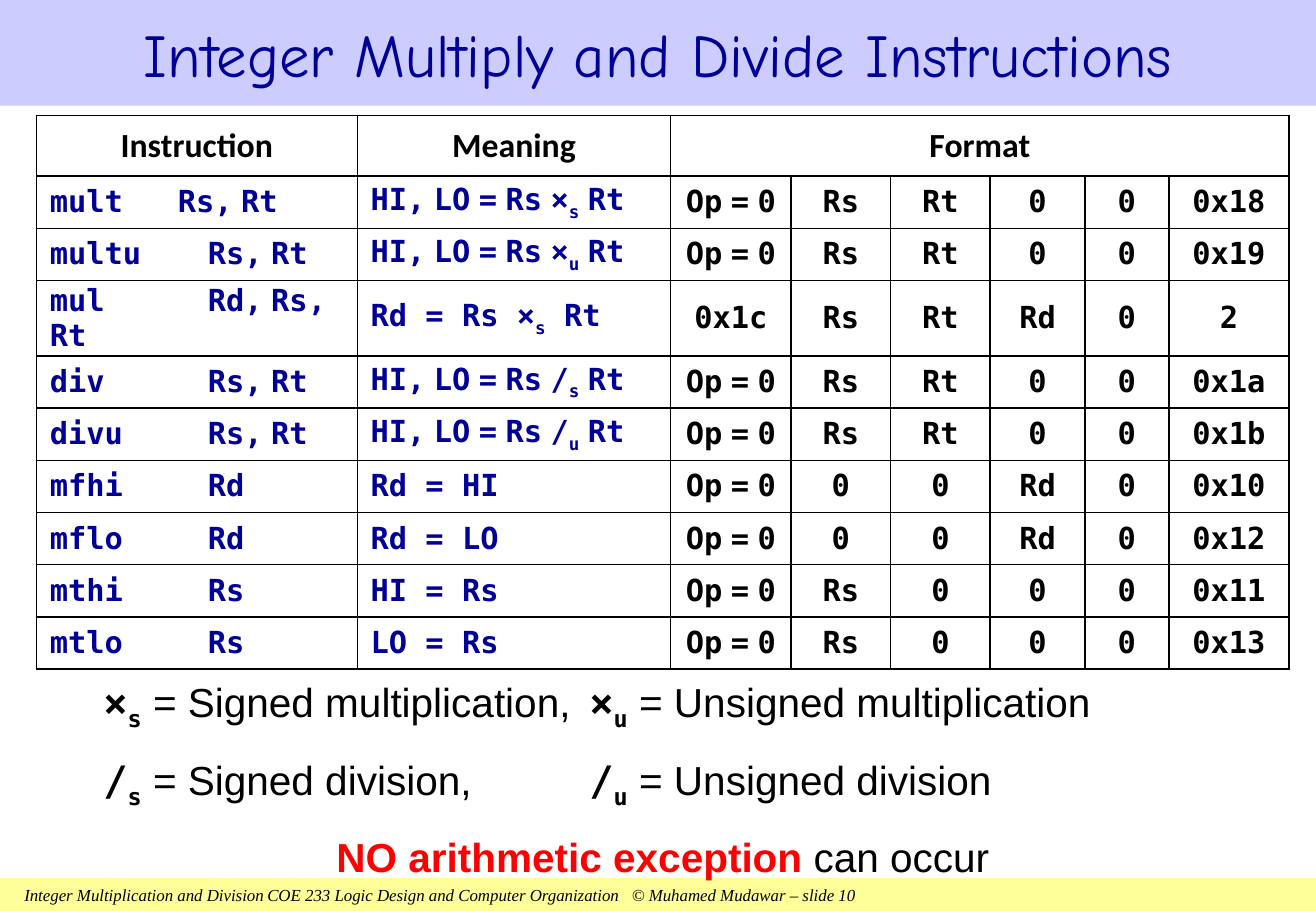
from lxml import etree
from pptx import Presentation
from pptx.dml.color import RGBColor
from pptx.enum import shapes, text
from pptx.oxml.ns import qn
from pptx.util import Inches, Pt

NAVY = RGBColor(0x00, 0x00, 0x99)
BLACK = RGBColor(0x00, 0x00, 0x00)
RED = RGBColor(0xFF, 0x00, 0x00)
LAVENDER = RGBColor(0xCC, 0xCC, 0xFF)
YELLOW = RGBColor(0xFF, 0xFF, 0x99)

MONO = "DejaVu Sans Mono"
BODY = "Arial"
PAGE_WIDTH, PAGE_HEIGHT = 10.83, 7.5
COLUMN_WIDTHS = (2.64, 2.58, 0.99, 0.82, 0.82, 0.78, 0.69, 0.99)
HEADER_HEIGHT, ROW_HEIGHT = 0.5, 0.43
HEADINGS = ("Instruction", "Meaning", "Format")

# "~" marks a narrow space and "_" lowers the next letter.
INSTRUCTIONS = (
    ("mult   Rs,~Rt", "HI,~LO~=~Rs~×_s~Rt", "Op~=~0 Rs Rt 0 0 0x18"),
    ("multu\t  Rs,~Rt", "HI,~LO~=~Rs~×_u~Rt", "Op~=~0 Rs Rt 0 0 0x19"),
    ("mul\t  Rd,~Rs, Rt", "Rd = Rs ×_s Rt", "0x1c Rs Rt Rd 0 2"),
    ("div\t  Rs,~Rt", "HI,~LO~=~Rs~/_s~Rt", "Op~=~0 Rs Rt 0 0 0x1a"),
    ("divu\t  Rs,~Rt", "HI,~LO~=~Rs~/_u~Rt", "Op~=~0 Rs Rt 0 0 0x1b"),
    ("mfhi\t  Rd", "Rd = HI", "Op~=~0 0 0 Rd 0 0x10"),
    ("mflo\t  Rd", "Rd = LO", "Op~=~0 0 0 Rd 0 0x12"),
    ("mthi\t  Rs", "HI = Rs", "Op~=~0 Rs 0 0 0 0x11"),
    ("mtlo\t  Rs", "LO = Rs", "Op~=~0 Rs 0 0 0 0x13"),
)
LEGEND = (
    ("×", "Signed multiplication", "Unsigned multiplication"),
    ("/", "Signed division", "Unsigned division"),
)


def add_span(para, words, font=BODY, size=18, color=BLACK, bold=False, italic=False, lowered=False):
    span = para.add_run()
    span.text = words
    span.font.name = font
    span.font.size = Pt(size)
    span.font.color.rgb = color
    span.font.bold = bold
    span.font.italic = italic
    if lowered:
        span.font._element.set("baseline", "-25000")


def add_code(para, code, **style):
    for index, chunk in enumerate(code.split("~")):
        if index:
            add_span(para, " ", bold=True, **style)
        head, mark, tail = chunk.partition("_")
        if head:
            add_span(para, head, font=MONO, bold=True, **style)
        if mark:
            add_span(para, tail[0], font=MONO, bold=True, lowered=True, **style)
            if tail[1:]:
                add_span(para, tail[1:], font=MONO, bold=True, **style)


def set_tabs(para, *stops):
    tabs = etree.SubElement(para._p.get_or_add_pPr(), qn("a:tabLst"))
    for stop in stops:
        etree.SubElement(tabs, qn("a:tab"), pos=str(Inches(stop)), algn="l")


def set_margins(target, side, end):
    target.margin_left = target.margin_right = Inches(side)
    target.margin_top = target.margin_bottom = Inches(end)


def format_cell(cell):
    set_margins(cell, 0.11, 0.02)
    cell.vertical_anchor = text.MSO_ANCHOR.MIDDLE
    properties = cell._tc.get_or_add_tcPr()
    for side in ("lnL", "lnR", "lnT", "lnB"):
        border = etree.SubElement(properties, qn(f"a:{side}"), w=str(Pt(1)))
        fill = etree.SubElement(border, qn("a:solidFill"))
        etree.SubElement(fill, qn("a:srgbClr"), val=str(BLACK))
    cell.fill.background()


def add_title(page, left, top, width, height):
    title = page.shapes.title
    title.left, title.top = Inches(left), Inches(top)
    title.width, title.height = Inches(width), Inches(height)
    title.fill.solid()
    title.fill.fore_color.rgb = LAVENDER
    frame = title.text_frame
    frame.auto_size = text.MSO_AUTO_SIZE.NONE
    frame.vertical_anchor = text.MSO_ANCHOR.MIDDLE
    para = frame.paragraphs[0]
    para.alignment = text.PP_ALIGN.CENTER
    add_span(para, "Integer Multiply and Divide Instructions", font="Comic Neue", size=36, color=NAVY)


def add_instruction_table(page, left, top):
    height = HEADER_HEIGHT + ROW_HEIGHT * len(INSTRUCTIONS)
    table = page.shapes.add_table(
        len(INSTRUCTIONS) + 1, len(COLUMN_WIDTHS),
        Inches(left), Inches(top), Inches(sum(COLUMN_WIDTHS)), Inches(height),
    ).table
    table.first_row = table.horz_banding = False
    for column, width in zip(table.columns, COLUMN_WIDTHS):
        column.width = Inches(width)
    for index, row in enumerate(table.rows):
        row.height = Inches(ROW_HEIGHT if index else HEADER_HEIGHT)
        for cell in row.cells:
            format_cell(cell)
    table.cell(0, 2).merge(table.cell(0, len(COLUMN_WIDTHS) - 1))
    for index, heading in enumerate(HEADINGS):
        para = table.cell(0, index).text_frame.paragraphs[0]
        para.alignment = text.PP_ALIGN.CENTER
        add_span(para, heading, font="Calibri", size=20, bold=True)
    for row, (instruction, meaning, fields) in enumerate(INSTRUCTIONS, 1):
        for column, code in enumerate((instruction, meaning, *fields.split())):
            para = table.cell(row, column).text_frame.paragraphs[0]
            if column == 0:
                set_tabs(para, 1)
            if column > 1:
                para.alignment = text.PP_ALIGN.CENTER
            add_code(para, code, color=BLACK if column > 1 else NAVY)


def add_legend(page, left, top, width, height):
    box = page.shapes.add_textbox(Inches(left), Inches(top), Inches(width), Inches(height))
    frame = box.text_frame
    frame.word_wrap = True
    set_margins(frame, 0, 0.05)
    paras = [frame.paragraphs[0], frame.add_paragraph(), frame.add_paragraph()]
    for para in paras:
        para.line_spacing = 1.1
        para.space_before = Pt(10)
    for para, (symbol, signed, unsigned) in zip(paras, LEGEND):
        set_tabs(para, 4)
        add_code(para, f"{symbol}_s", size=24)
        add_span(para, f" = {signed},\t", size=24)
        add_code(para, f"{symbol}_u", size=24)
        add_span(para, f" = {unsigned}", size=24)
    paras[-1].alignment = text.PP_ALIGN.CENTER
    add_span(paras[-1], "NO arithmetic exception ", size=24, color=RED, bold=True)
    add_span(paras[-1], "can occur", size=24)


def add_footer(page, left, top, width, height):
    bar = page.shapes.add_shape(
        shapes.MSO_SHAPE.RECTANGLE, Inches(left), Inches(top), Inches(width), Inches(height))
    bar.shadow.inherit = False
    bar.fill.solid()
    bar.fill.fore_color.rgb = YELLOW
    bar.line.fill.background()
    frame = bar.text_frame
    frame.word_wrap = True
    set_margins(frame, 0.2, 0)
    frame.vertical_anchor = text.MSO_ANCHOR.MIDDLE
    para = frame.paragraphs[0]
    para.alignment = text.PP_ALIGN.LEFT
    set_tabs(para, 2, 5)
    add_span(
        para,
        "Integer Multiplication and Division\tCOE 233 Logic Design and Computer Organization"
        "\t© Muhamed Mudawar – slide 10",
        font="Times New Roman", size=10, italic=True)


def main():
    deck = Presentation()
    deck.slide_width, deck.slide_height = Inches(PAGE_WIDTH), Inches(PAGE_HEIGHT)
    page = deck.slides.add_slide(deck.slide_layouts[5])
    add_footer(page, 0, 7.23, PAGE_WIDTH, 0.27)
    add_title(page, 0, 0, PAGE_WIDTH, 0.87)
    add_instruction_table(page, 0.3, 0.95)
    add_legend(page, 0.85, 5.48, 9.21, 1.73)
    deck.save("out.pptx")


if __name__ == "__main__":
    main()
